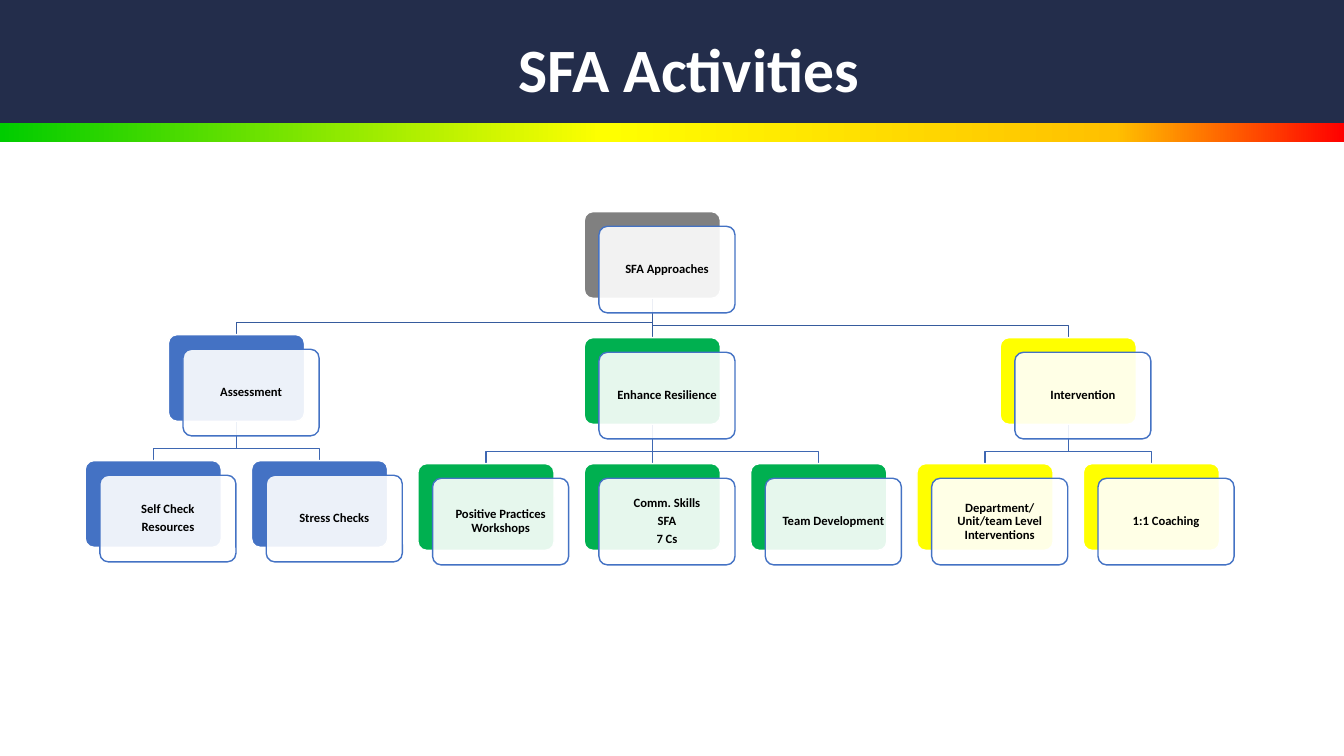
"""Build the SFA Activities slide: a three-level chart of approaches."""
from dataclasses import dataclass

from lxml import etree
from pptx import Presentation
from pptx.dml.color import RGBColor
from pptx.enum import shapes, text
from pptx.oxml import ns
from pptx.util import Inches, Pt

TITLE = "SFA Activities"
ROOT = "SFA Approaches"
BRANCHES = [
    ("Assessment", "blue", 3.32,
     [["Self Check", "Resources"], ["Stress Checks"]]),
    ("Enhance Resilience", "green", 3.35,
     [["Positive Practices Workshops"], ["Comm. Skills", "SFA", "7 Cs"],
      ["Team Development"]]),
    ("Intervention", "yellow", 3.35,
     [["Department/ Unit/team Level Interventions"], ["1:1 Coaching"]]),
]
RAINBOW = [(0, "00CC00"), (45, "FFFF00"), (83, "FFC000"), (100, "FF0000")]


@dataclass(frozen=True)
class Theme:
    """Colours and type sizes of the slide."""
    font: str = "Calibri"
    navy: str = "232D4B"
    white: str = "FFFFFF"
    black: str = "000000"
    gray: str = "808080"
    blue: str = "4472C4"
    green: str = "00B050"
    yellow: str = "FFFF00"
    upper: str = "365B9D"
    lower: str = "3E67B2"
    title: int = 44
    label: int = 9


THEME = Theme()
WIDTH, HEIGHT = 13.33, 7.5
CARD_W, CARD_H, SHIFT = 1.35, 0.86, 0.145
FIRST, PITCH = 1.52, 1.65
ROOT_TOP, LEVEL, BEND = 2.1, 1.25, 0.12


def rgb(code):
    """Turn a hex code into a colour."""
    return RGBColor.from_string(code)


def mean(xs):
    """Return the average of a list."""
    return sum(xs) / len(xs)


def add_box(slide, kind, box, fill, line=None):
    """Add a filled shape without shadow."""
    shape = slide.shapes.add_shape(kind, *map(Inches, box))
    shape.shadow.inherit = False
    shape.fill.solid()
    shape.fill.fore_color.rgb = rgb(fill)
    if line:
        shape.line.color.rgb = rgb(line)
        shape.line.width = Pt(1)
    else:
        shape.line.fill.background()
    return shape


def write(frame, lines, size, color, gap=0):
    """Write centred bold paragraphs."""
    frame.word_wrap = True
    frame.vertical_anchor = text.MSO_ANCHOR.MIDDLE
    for i, line in enumerate(lines):
        para = frame.add_paragraph() if i else frame.paragraphs[0]
        para.alignment = text.PP_ALIGN.CENTER
        para.line_spacing = 0.9
        para.space_after = Pt(gap)
        run = para.add_run()
        run.text = line
        run.font.name, run.font.size, run.font.bold = THEME.font, Pt(size), True
        run.font.color.rgb = rgb(color)


def add_card(slide, mid, top, lines, color):
    """Add a coloured card with a translucent label card over it."""
    kind = shapes.MSO_SHAPE.ROUNDED_RECTANGLE
    left = mid - CARD_W / 2
    back = add_box(slide, kind, (left, top, CARD_W, CARD_H), color, THEME.white)
    front = add_box(slide, kind, (left + SHIFT, top + SHIFT, CARD_W, CARD_H),
                    THEME.white, THEME.blue)
    back.adjustments[0] = front.adjustments[0] = 0.1
    tint = front.element.spPr.find(ns.qn("a:solidFill"))[0]
    etree.SubElement(tint, ns.qn("a:alpha"), val="90000")
    frame = front.text_frame
    frame.margin_left = frame.margin_right = Inches(0.04)
    frame.margin_top = frame.margin_bottom = Inches(0.04)
    write(frame, lines, THEME.label, THEME.black, 3)


def add_link(slide, start, end, color):
    """Join a parent card to a child card."""
    (x, y), (to_x, to_y) = start, end
    if abs(x - to_x) < 0.02:
        link = slide.shapes.add_connector(
            shapes.MSO_CONNECTOR.STRAIGHT, *map(Inches, (x, y, x, to_y)))
        etree.SubElement(link.element.spPr, ns.qn("a:effectLst"))
    else:
        turn = to_y - BEND
        path = slide.shapes.build_freeform(Inches(x), Inches(y))
        path.add_line_segments(
            [(Inches(a), Inches(b))
             for a, b in ((x, turn), (to_x, turn), (to_x, to_y))], close=False)
        link = path.convert_to_shape()
        link.fill.background()
        link.shadow.inherit = False
    link.line.color.rgb = rgb(color)
    link.line.width = Pt(1)


def add_header(slide):
    """Add the navy band, the rainbow strip and the title."""
    kind = shapes.MSO_SHAPE.RECTANGLE
    strip = add_box(slide, kind, (0, 1.22, WIDTH, 0.19), THEME.green)
    strip.fill.gradient()
    strip.fill.gradient_angle = 0
    stops = strip.element.spPr.find(ns.qn("a:gradFill")).find(ns.qn("a:gsLst"))
    for stop in list(stops):
        stops.remove(stop)
    for pos, code in RAINBOW:
        stop = etree.SubElement(stops, ns.qn("a:gs"), pos=str(pos * 1000))
        etree.SubElement(stop, ns.qn("a:srgbClr"), val=code)
    band = add_box(slide, kind, (0, 0, WIDTH, 1.22), THEME.navy)
    title = slide.shapes.title
    for shape in (strip, band):
        title.element.addprevious(shape.element)
    title.left, title.top, title.width, title.height = map(
        Inches, (1.75, 0.17, 10.17, 1.1))
    write(title.text_frame, [TITLE], THEME.title, THEME.white)


def add_chart(slide):
    """Place leaves evenly, centre each parent over its children."""
    cards, links, mids, count = [], [], [], 0
    for name, tone, top, leaves in BRANCHES:
        color = getattr(THEME, tone)
        xs = [FIRST + PITCH * (count + i) for i in range(len(leaves))]
        count += len(leaves)
        mid = mean(xs)
        mids.append((mid, top))
        cards.append((mid, top, [name], color))
        for x, lines in zip(xs, leaves):
            cards.append((x, top + LEVEL, lines, color))
            links.append(((mid, top + CARD_H), (x, top + LEVEL), THEME.lower))
    hub = mean([x for x, _ in mids])
    cards.insert(0, (hub, ROOT_TOP, [ROOT], THEME.gray))
    links += [((hub, ROOT_TOP + CARD_H), end, THEME.upper) for end in mids]
    for link in links:
        add_link(slide, *link)
    for card in cards:
        add_card(slide, *card)


def main():
    """Build and save the deck."""
    deck = Presentation()
    deck.slide_width, deck.slide_height = Inches(WIDTH), Inches(HEIGHT)
    slide = deck.slides.add_slide(deck.slide_layouts[5])
    add_header(slide)
    add_chart(slide)
    deck.save("out.pptx")


if __name__ == "__main__":
    main()
